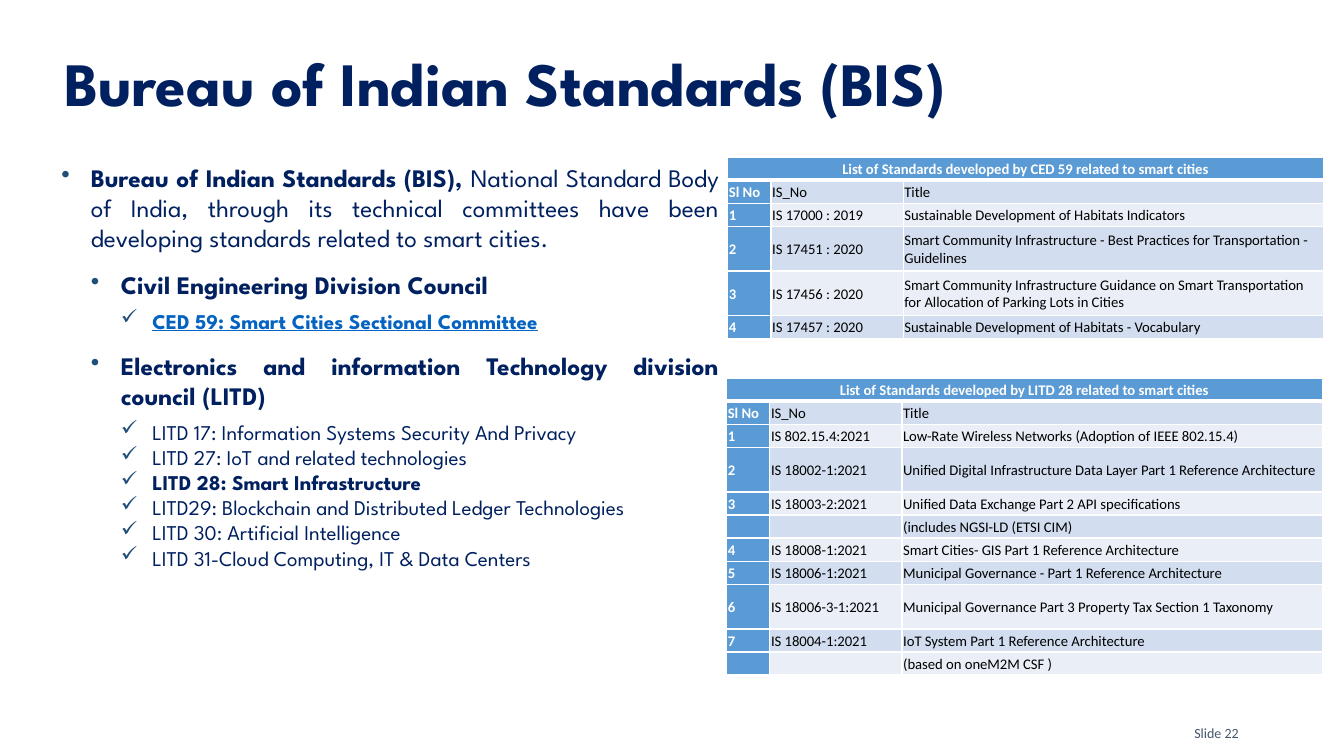
from lxml.etree import SubElement as Sub
from pptx import Presentation
from pptx.dml.color import RGBColor as RGB
from pptx.enum.text import MSO_ANCHOR as Anchor, PP_ALIGN as Align
from pptx.oxml.ns import qn
from pptx.util import Cm, Pt

NAVY = RGB(0x00, 0x20, 0x60)
STEEL = RGB(0x1F, 0x4E, 0x79)
LINK = RGB(0x05, 0x63, 0xC1)
SLATE = RGB(0x44, 0x54, 0x6A)
BLUE = RGB(0x5B, 0x9B, 0xD5)
BANDS = RGB(0xEA, 0xEF, 0xF7), RGB(0xD2, 0xDE, 0xEF)
WHITE = RGB(0xFF, 0xFF, 0xFF)
BLACK = RGB(0x00, 0x00, 0x00)
HEAD = "League Spartan"
BODY = "Calibri"

# Per level: bullet, left indent (cm), hanging part (cm), text size
LEVELS = [("•", 0.74, 0.74, 18), ("•", 1.5, 0.76, 18), ("✓", 2.29, 0.79, 15)]
COLS = 1.09, 3.33, 10.59
LOW, TALL = 0.58, 1.13

# Level, bold lead, plain rest
POINTS = [
    (0, "Bureau of Indian Standards (BIS), ",
     "National Standard Body of India, through its technical committees "
     "have been developing standards related to smart cities."),
    (1, "Civil Engineering Division Council", ""),
    (2, "CED 59: Smart Cities Sectional Committee", ""),
    (1, "Electronics and information Technology division council (LITD)", ""),
    (2, "", "LITD 17: Information Systems Security And Privacy"),
    (2, "", "LITD 27: IoT and related technologies"),
    (2, "LITD 28: Smart Infrastructure", ""),
    (2, "", "LITD29: Blockchain and Distributed Ledger Technologies"),
    (2, "", "LITD 30: Artificial Intelligence"),
    (2, "", "LITD 31-Cloud Computing, IT & Data Centers"),
]
TOP = ("Sl No", "IS_No", "Title")
CIVIL = [
    TOP,
    ("1", "IS 17000 : 2019", "Sustainable Development of Habitats Indicators"),
    ("2", "IS 17451 : 2020", "Smart Community Infrastructure - Best Practices "
     "for Transportation - Guidelines"),
    ("3", "IS 17456 : 2020", "Smart Community Infrastructure Guidance on Smart "
     "Transportation for Allocation of Parking Lots in Cities"),
    ("4", "IS 17457 : 2020", "Sustainable Development of Habitats - Vocabulary"),
]
DIGITAL = [
    TOP,
    ("1", "IS 802.15.4:2021",
     "Low-Rate Wireless Networks (Adoption of IEEE 802.15.4)"),
    ("2", "IS 18002-1:2021", "Unified Digital Infrastructure Data Layer "
     "Part 1 Reference Architecture"),
    ("3", "IS 18003-2:2021", "Unified Data Exchange Part 2 API specifications"),
    ("", "", "(includes NGSI-LD (ETSI CIM)"),
    ("4", "IS 18008-1:2021", "Smart Cities- GIS Part 1 Reference Architecture"),
    ("5", "IS 18006-1:2021",
     "Municipal Governance - Part 1 Reference Architecture"),
    ("6", "IS 18006-3-1:2021",
     "Municipal Governance Part 3 Property Tax Section 1 Taxonomy"),
    ("7", "IS 18004-1:2021", "IoT System Part 1 Reference Architecture"),
    ("", "", "(based on oneM2M CSF )"),
]


def add_run(para, text, size, font, color, bold=False):
    run = para.add_run()
    run.text = text
    run.font.size = Pt(size)
    run.font.name = font
    run.font.color.rgb = color
    run.font.bold = bold
    return run


def add_box(slide, left, top, width, height, wrap=True):
    frame = slide.shapes.add_textbox(
        Cm(left), Cm(top), Cm(width), Cm(height)).text_frame
    frame.word_wrap = wrap
    return frame


def add_bullet(para, level):
    mark, left, hang, _ = LEVELS[level]
    props = para._p.get_or_add_pPr()
    props.set("lvl", str(level))
    props.set("marL", str(Cm(left)))
    props.set("indent", str(-Cm(hang)))
    tint = Sub(props, qn("a:buClr"))
    Sub(tint, qn("a:srgbClr"), val=str(STEEL))
    Sub(props, qn("a:buChar"), char=mark)


def add_points(slide):
    frame = add_box(slide, 1.3, 3.96, 17.07, 13.69)
    for num, (level, lead, rest) in enumerate(POINTS):
        para = frame.add_paragraph() if num else frame.paragraphs[0]
        add_bullet(para, level)
        linked = lead.startswith("CED")
        para.alignment = Align.JUSTIFY
        para.space_before = Pt(6 if num and level < 2 else 0)
        para.space_after = Pt(6 if level < 2 or linked else 0)
        size = LEVELS[level][3]
        if lead:
            run = add_run(para, lead, size, HEAD, LINK if linked else NAVY, True)
            run.font.underline = linked
        if rest:
            add_run(para, rest, size, HEAD, NAVY)


def add_edges(cell, row):
    """White grid, with a thick line between the heading and the rest."""
    thick = {(0, "B"), (1, "T")}
    for side in "LRTB":
        line = Sub(cell._tc.get_or_add_tcPr(), qn("a:ln" + side),
                   w=str(Pt(3 if (row, side) in thick else 1)))
        Sub(Sub(line, qn("a:solidFill")), qn("a:srgbClr"), val=str(WHITE))


def fill_cell(cell, text, row, col):
    add_edges(cell, row)
    strong = row == 0 or col == 0
    cell.fill.solid()
    cell.fill.fore_color.rgb = BLUE if strong else BANDS[row % 2]
    cell.vertical_anchor = Anchor.MIDDLE
    cell.margin_left = cell.margin_right = cell.margin_top = Cm(0.03)
    cell.margin_bottom = 0
    para = cell.text_frame.paragraphs[0]
    para.alignment = Align.LEFT if row else Align.CENTER
    if text:
        add_run(para, text, 10.5, BODY, WHITE if strong else BLACK, strong)
    else:
        Sub(para._p, qn("a:endParaRPr"), sz="1050")


def add_list(slide, left, top, title, items, tall):
    rows = [(title, "", "")] + items
    highs = [TALL if num in tall else LOW for num in range(len(rows))]
    table = slide.shapes.add_table(
        len(rows), len(COLS), Cm(left), Cm(top),
        Cm(sum(COLS)), Cm(sum(highs))).table
    for col, width in zip(table.columns, COLS):
        col.width = Cm(width)
    for num, (row, high) in enumerate(zip(rows, highs)):
        table.rows[num].height = Cm(high)
        for col, text in enumerate(row):
            # The band colours start dark just below the heading
            fill_cell(table.cell(num, col), text, num, col)
    table.cell(0, 0).merge(table.cell(0, len(COLS) - 1))


def main():
    deck = Presentation()
    deck.slide_width, deck.slide_height = Cm(33.87), Cm(19.05)
    slide = deck.slides.add_slide(deck.slide_layouts[6])

    title = add_box(slide, 1.37, 0.33, 30.18, 3.68)
    title.vertical_anchor = Anchor.MIDDLE
    title.paragraphs[0].line_spacing = 0.9
    add_run(title.paragraphs[0], "Bureau of Indian Standards (BIS)",
            44, HEAD, NAVY, True)

    add_points(slide)
    label = "List of Standards developed by {} related to smart cities"
    add_list(slide, 18.34, 3.96, label.format("CED 59"), CIVIL, {3, 4})
    add_list(slide, 18.31, 9.53, label.format("LITD 28"), DIGITAL, {3, 8})

    foot = add_box(slide, 29.85, 18.14, 1.68, 0.69, wrap=False)
    add_run(foot.paragraphs[0], "Slide 22", 10, BODY, SLATE)
    deck.save("out.pptx")


if __name__ == "__main__":
    main()
